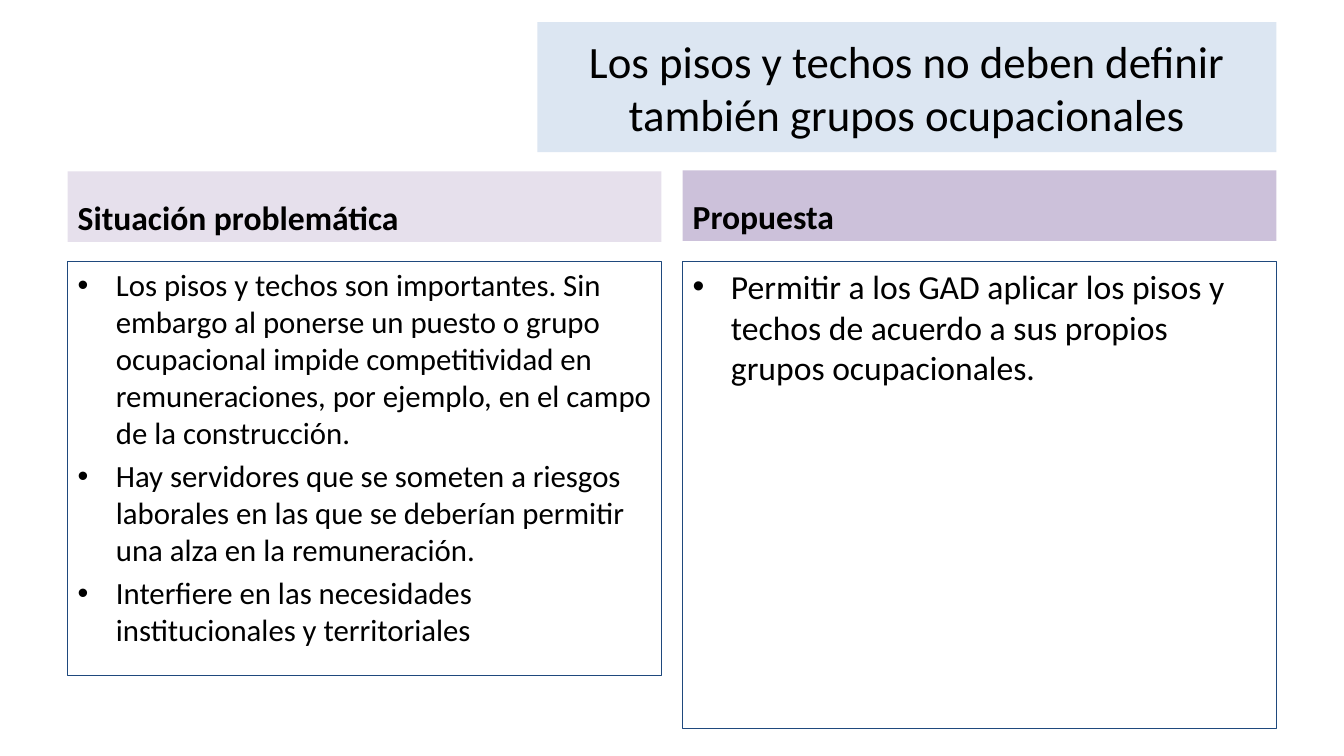
from dataclasses import dataclass
from typing import Any, Optional

from pptx import Presentation
from pptx import util as u
from pptx.dml.color import RGBColor
from pptx.enum import text
from pptx.oxml import parse_xml
from pptx.oxml.ns import nsdecls


# Colours, font and type sizes
@dataclass(frozen=True)
class Theme:
    font: str = "Calibri"
    ink: str = "000000"
    title_fill: str = "DCE6F2"
    problem_fill: str = "E6E0EC"
    proposal_fill: str = "CCC1DA"
    border: str = "1F497D"
    border_width: float = 0.75
    title_size: float = 32
    heading_size: float = 24
    problem_size: float = 22
    proposal_size: float = 24


@dataclass(frozen=True)
class Panel:
    placeholder: int
    left: float
    top: float
    width: float
    height: float
    paragraphs: tuple[str, ...]
    size: float
    anchor: text.MSO_ANCHOR
    align: text.PP_ALIGN = text.PP_ALIGN.LEFT
    fill: Optional[str] = None
    bold: bool = False
    bulleted: bool = False


@dataclass(frozen=True)
class Column:
    left: float
    heading_top: float
    body_height: float
    heading: str
    fill: str
    size: float
    points: tuple[str, ...]


THEME = Theme()
COMPARISON_LAYOUT = 4
COLUMN_WIDTH = 5.89
HEADING_HEIGHT = 0.7
BODY_TOP = 2.59
BULLET_INDENT = 0.38
SPACE_RATIO = 0.2

TITLE = Panel(
    0, 5.33, 0.22, 7.33, 1.29,
    ("Los pisos y techos no deben definir también grupos ocupacionales",),
    THEME.title_size, text.MSO_ANCHOR.MIDDLE, text.PP_ALIGN.CENTER, THEME.title_fill,
)

COLUMNS = (
    Column(
        0.67, 1.7, 4.11, "Situación problemática", THEME.problem_fill, THEME.problem_size,
        (
            "Los pisos y techos son importantes. Sin embargo al ponerse un puesto o grupo "
            "ocupacional impide competitividad en remuneraciones, por ejemplo, en el campo "
            "de la construcción.",
            "Hay servidores que se someten a riesgos laborales en las que se deberían "
            "permitir una alza en la remuneración.",
            "Interfiere en las necesidades institucionales y territoriales",
        ),
    ),
    Column(
        6.77, 1.69, 4.64, "Propuesta", THEME.proposal_fill, THEME.proposal_size,
        (
            "Permitir a los GAD aplicar los pisos y techos de acuerdo a sus propios "
            "grupos ocupacionales.",
        ),
    ),
)


def apply_format(target: Any, values: dict[str, Any]) -> None:
    for name, value in values.items():
        setattr(target, name, value)


def add_bullet(paragraph: Any) -> None:
    properties = paragraph._p.get_or_add_pPr()
    properties.set("marL", str(u.Inches(BULLET_INDENT)))
    properties.set("indent", str(-u.Inches(BULLET_INDENT)))
    properties.append(parse_xml(f'<a:buFont {nsdecls("a")} typeface="Arial"/>'))
    properties.append(parse_xml(f'<a:buChar {nsdecls("a")} char="•"/>'))


def draw_panel(slide: Any, panel: Panel) -> None:
    shape = slide.placeholders[panel.placeholder]
    apply_format(shape, {
        name: u.Inches(getattr(panel, name)) for name in ("left", "top", "width", "height")
    })

    # Filled headings, outlined bodies
    if panel.fill:
        shape.fill.solid()
        shape.fill.fore_color.rgb = RGBColor.from_string(panel.fill)
    else:
        shape.line.color.rgb = RGBColor.from_string(THEME.border)
        shape.line.width = u.Pt(THEME.border_width)

    # Text
    frame = shape.text_frame
    apply_format(frame, {
        "text": "\n".join(panel.paragraphs),
        "word_wrap": True,
        "auto_size": text.MSO_AUTO_SIZE.NONE,
        "vertical_anchor": panel.anchor,
    })
    for index, paragraph in enumerate(frame.paragraphs):
        if panel.bulleted:
            add_bullet(paragraph)
        apply_format(paragraph, {
            "alignment": panel.align,
            "space_before": u.Pt(panel.size * SPACE_RATIO if index else 0),
        })
        for run in paragraph.runs:
            apply_format(run.font, {
                "name": THEME.font, "size": u.Pt(panel.size), "bold": panel.bold,
            })
            run.font.color.rgb = RGBColor.from_string(THEME.ink)


def draw_column(slide: Any, column: Column, heading_placeholder: int) -> None:
    draw_panel(slide, Panel(
        heading_placeholder, column.left, column.heading_top, COLUMN_WIDTH, HEADING_HEIGHT,
        (column.heading,), THEME.heading_size, text.MSO_ANCHOR.BOTTOM,
        fill=column.fill, bold=True,
    ))
    draw_panel(slide, Panel(
        heading_placeholder + 1, column.left, BODY_TOP, COLUMN_WIDTH, column.body_height,
        column.points, column.size, text.MSO_ANCHOR.TOP, bulleted=True,
    ))


def main() -> None:
    presentation = Presentation()
    apply_format(presentation, {
        "slide_width": u.Inches(13.33), "slide_height": u.Inches(7.5),
    })
    slide = presentation.slides.add_slide(presentation.slide_layouts[COMPARISON_LAYOUT])

    # Title, then each heading with its list
    draw_panel(slide, TITLE)
    for index, column in enumerate(COLUMNS):
        draw_column(slide, column, 1 + 2 * index)

    presentation.save("out.pptx")


if __name__ == "__main__":
    main()
